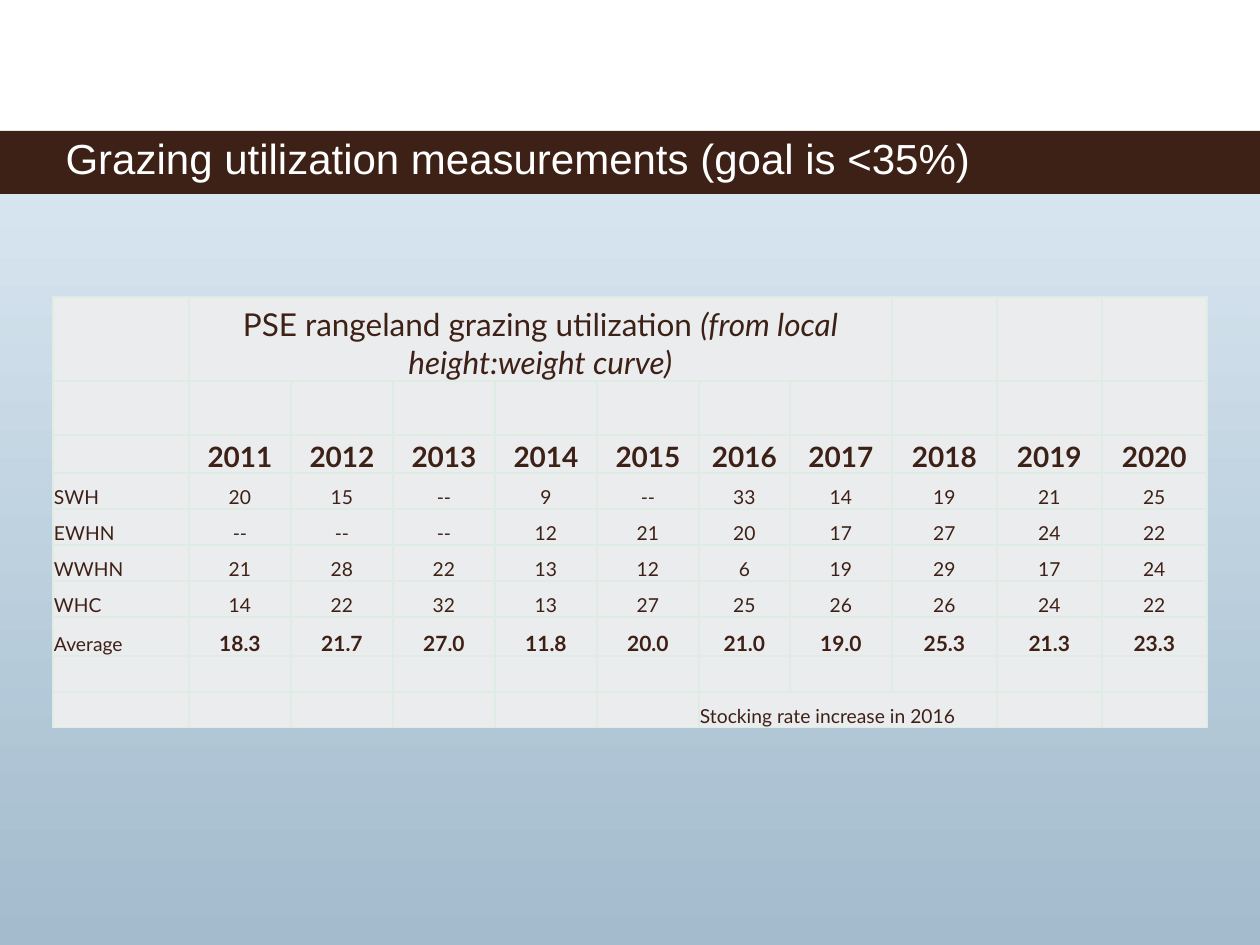
import lxml.etree
import pptx
import pptx.dml.color
import pptx.enum.shapes
import pptx.enum.text
import pptx.oxml.ns
import pptx.util

SCALE = 914400 / 126
BROWN, WHITE, PANEL, GRID = "3E2116", "FFFFFF", "EBECEE", "DFECE4"
LEFT = pptx.enum.text.PP_ALIGN.LEFT
CENTER = pptx.enum.text.PP_ALIGN.CENTER

COLS = [136] + [102] * 5 + [91, 102] + [105] * 3
ROWS = [84, 54, 38] + [36] * 4 + [39, 36, 36]
HEADER_ROW, AVERAGE_ROW = 2, 7
DATA = [
    [""] + [str(year) for year in range(2011, 2021)],
    "SWH 20 15 -- 9 -- 33 14 19 21 25".split(),
    "EWHN -- -- -- 12 21 20 17 27 24 22".split(),
    "WWHN 21 28 22 13 12 6 19 29 17 24".split(),
    "WHC 14 22 32 13 27 25 26 26 24 22".split(),
    "Average 18.3 21.7 27.0 11.8 20.0 21.0 19.0 25.3 21.3 23.3".split(),
]


def px(n):
    return pptx.util.Emu(round(n * SCALE))


def rgb(color):
    return pptx.dml.color.RGBColor.from_string(color)


def write(p, text, size=11, font="Lato", color=BROWN, bold=False, italic=False, align=LEFT):
    """Append one formatted run to a paragraph."""
    p.alignment = align
    r = p.add_run()
    r.text = text
    r.font.size = pptx.util.Pt(size)
    r.font.name = font
    r.font.color.rgb = rgb(color)
    r.font.bold = bold
    r.font.italic = italic


def sub(parent, tag, **attrs):
    return lxml.etree.SubElement(parent, pptx.oxml.ns.qn(tag), attrs)


class Deck:
    """Holds the presentation style and the current slide."""

    def __init__(self):
        self.prs = pptx.Presentation()
        self.prs.slide_width, self.prs.slide_height = px(1260), px(945)
        self.s = self.prs.slides.add_slide(self.prs.slide_layouts[5])

    def background(self, top, bottom):
        fill = self.s.background.fill
        fill.gradient()
        fill.gradient_angle = 270
        for stop, color in zip(fill.gradient_stops, (top, bottom)):
            stop.color.rgb = rgb(color)

    def band(self, y, h, color):
        sp = self.s.shapes.add_shape(
            pptx.enum.shapes.MSO_SHAPE.RECTANGLE, 0, px(y), self.prs.slide_width, px(h))
        sp.shadow.inherit = False
        sp.fill.solid()
        sp.fill.fore_color.rgb = rgb(color)
        sp.line.fill.background()

    def title(self, text, x, y, w, h):
        sp = self.s.shapes.title
        sp.left, sp.top, sp.width, sp.height = px(x), px(y), px(w), px(h)
        tf = sp.text_frame
        tf.word_wrap = True
        tf.auto_size = pptx.enum.text.MSO_AUTO_SIZE.NONE
        tf.vertical_anchor = pptx.enum.text.MSO_ANCHOR.MIDDLE
        write(tf.paragraphs[0], text, size=24, font="Arial", color=WHITE)
        self.s.shapes._spTree.append(sp._element)  # in front of the bands

    def style_cell(self, cell):
        tcPr = cell._tc.get_or_add_tcPr()
        for side in ("a:lnL", "a:lnR", "a:lnT", "a:lnB"):
            line = sub(tcPr, side, w="12700")
            sub(sub(line, "a:solidFill"), "a:srgbClr", val=GRID)
        cell.fill.solid()
        cell.fill.fore_color.rgb = rgb(PANEL)
        cell.margin_left = cell.margin_right = cell.margin_top = px(1)
        cell.margin_bottom = 0
        cell.vertical_anchor = pptx.enum.text.MSO_ANCHOR.BOTTOM

    def table(self, x, y, cols, rows):
        frame = self.s.shapes.add_table(
            len(rows), len(cols), px(x), px(y), px(sum(cols)), px(sum(rows)))
        table = frame.table
        table.first_row = table.horz_banding = False
        for column, w in zip(table.columns, cols):
            column.width = px(w)
        for row, h in zip(table.rows, rows):
            row.height = px(h)
        for cell in table.iter_cells():
            self.style_cell(cell)
            # keeps empty cells from stretching their row
            sub(cell.text_frame.paragraphs[0]._p, "a:endParaRPr", sz="1100")
        return table


def main():
    deck = Deck()
    deck.background("E4F0F8", "A3BBCD")
    deck.band(0, 136, WHITE)
    deck.band(131, 63, BROWN)
    deck.title("Grazing utilization measurements (goal is <35%)", 53, 126, 1155, 63)

    table = deck.table(53, 297, COLS, ROWS)
    heading, note = table.cell(0, 1), table.cell(9, 6)
    heading.merge(table.cell(0, 7))
    note.merge(table.cell(9, 8))
    p = heading.text_frame.paragraphs[0]
    write(p, "PSE rangeland grazing utilization ", size=18, align=CENTER)
    write(p, "(from local height:weight curve)", size=18, italic=True, align=CENTER)
    write(note.text_frame.paragraphs[0], "Stocking rate increase in 2016")

    sizes = {HEADER_ROW: 16, AVERAGE_ROW: 12}
    for i, values in enumerate(DATA, HEADER_ROW):
        for j, text in enumerate(values):
            if not text:
                continue
            p = table.cell(i, j).text_frame.paragraphs[0]
            if j == 0:
                write(p, text)
            else:
                write(p, text, size=sizes.get(i, 11), bold=i in sizes, align=CENTER)

    deck.prs.save("out.pptx")


if __name__ == "__main__":
    main()
